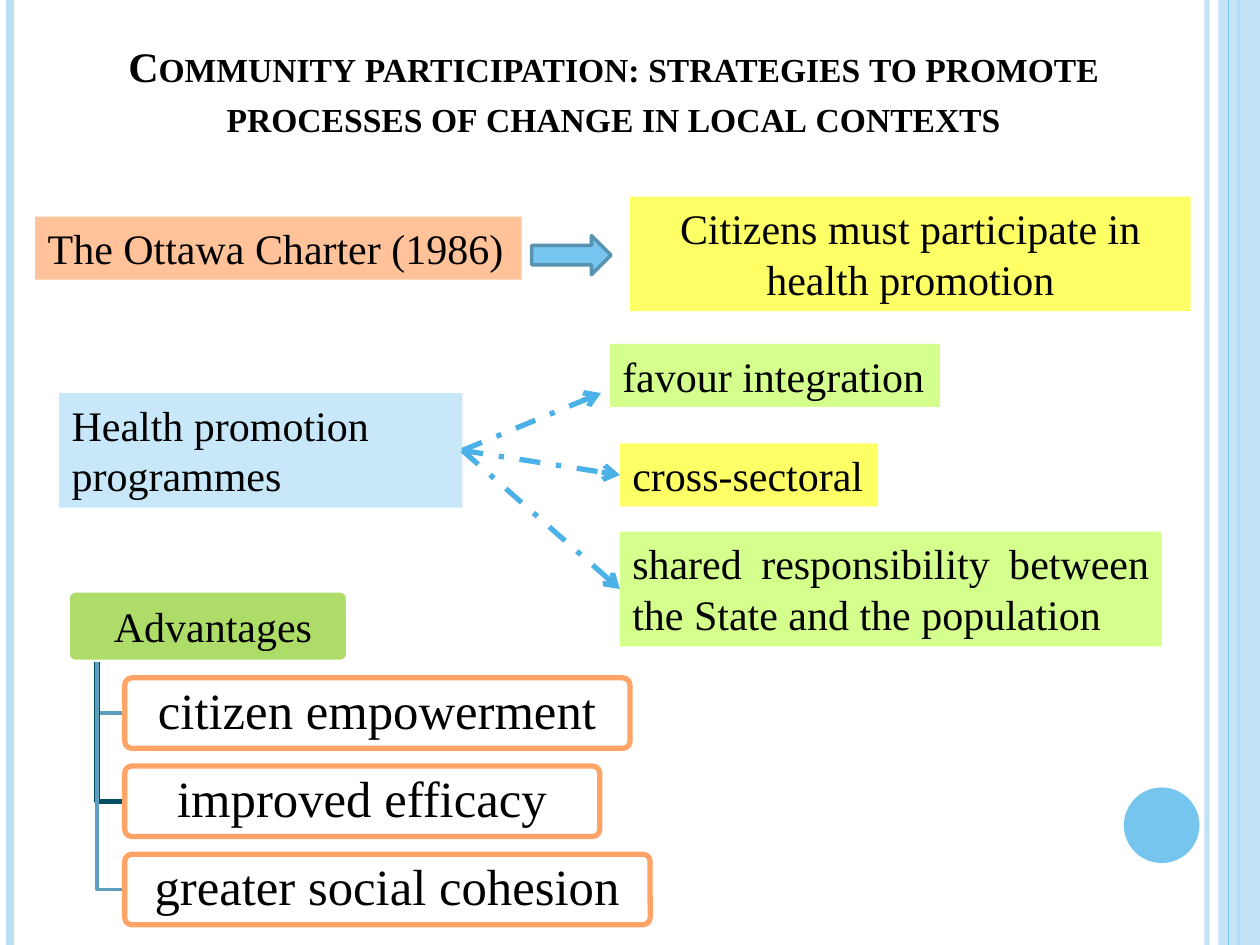
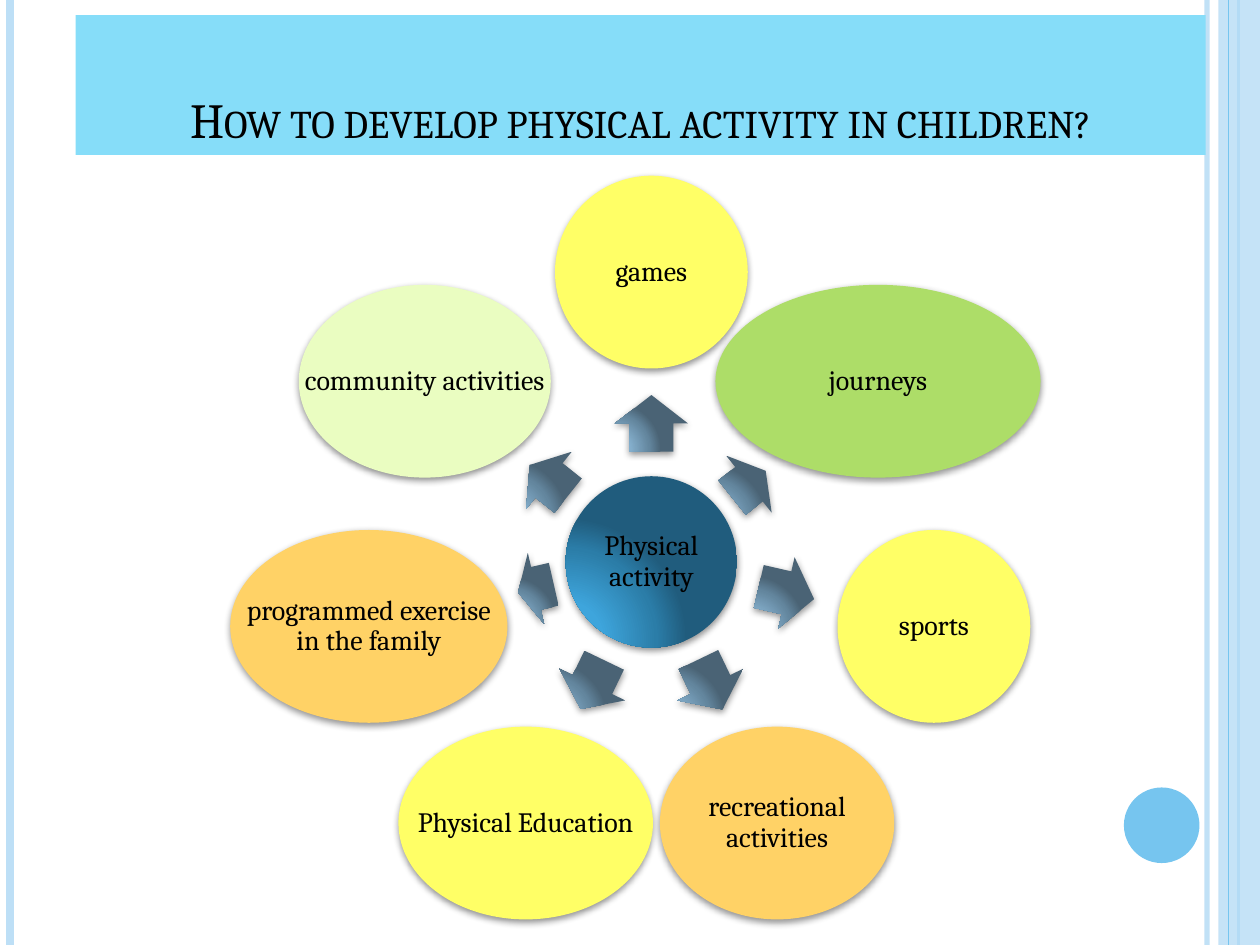
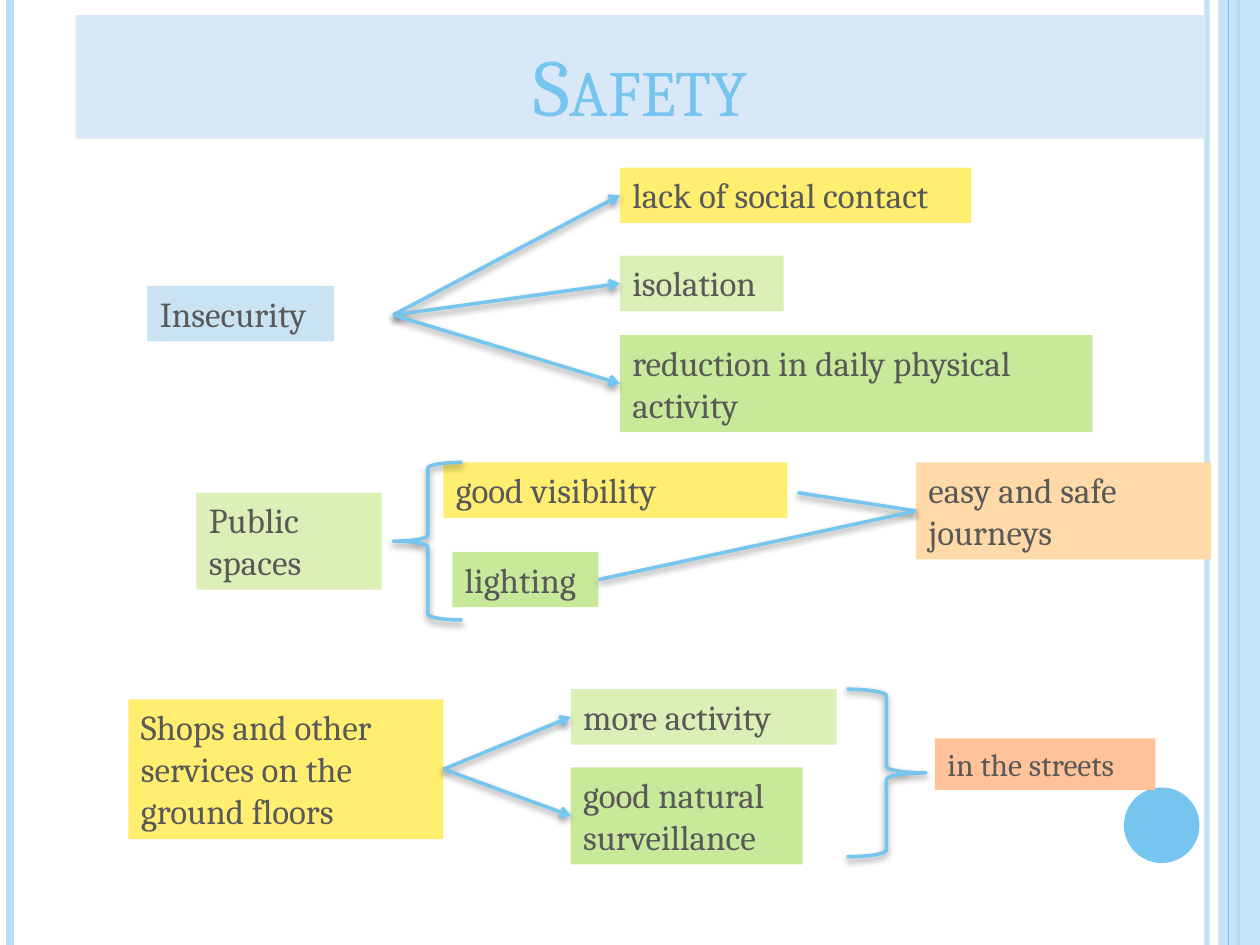
from math import cos, sin, radians
from lxml.etree import SubElement
from pptx import Presentation
from pptx.dml.color import RGBColor
from pptx.enum.dml import MSO_LINE
from pptx.enum.shapes import MSO_CONNECTOR, MSO_SHAPE as Kind
from pptx.enum.text import MSO_ANCHOR as Anchor, PP_ALIGN as Align
from pptx.oxml.ns import qn
from pptx.util import Inches, Pt

# Shared look
WIDE, HIGH = 10, 7.5
TIMES, CAMBRIA = "Times New Roman", "Cambria"
BLACK, WHITE, GREY = (RGBColor.from_string(c) for c in ("000000", "FFFFFF", "595959"))
SKY, PALE, BLUE = RGBColor(118, 197, 239), RGBColor(189, 223, 246), RGBColor(75, 177, 231)
STEEL, TEAL, EDGE = RGBColor(94, 158, 191), RGBColor(5, 78, 101), RGBColor(87, 146, 177)
ICE, MIST, AQUA = RGBColor(200, 232, 249), RGBColor(202, 227, 242), RGBColor(134, 221, 249)
HAZE = RGBColor(217, 232, 249)
YELLOW, LEMON, GOLD = RGBColor(255, 255, 102), RGBColor(255, 238, 112), RGBColor(255, 210, 102)
LIME, GREEN, CREAM = RGBColor(212, 255, 141), RGBColor(173, 221, 104), RGBColor(234, 253, 193)
LEAF, MINT = RGBColor(200, 232, 154), RGBColor(219, 239, 182)
PEACH, SAND, ORANGE = RGBColor(255, 194, 153), RGBColor(255, 217, 167), RGBColor(255, 164, 102)
HUB = ((0, "40ABE4"), (30, "3EA5DC"), (75, "2B7DA8"), (100, "205C7D"))
DART = ((0, "8CB9D8"), (30, "87B2D0"), (75, "63869E"), (100, "4A6375"))
GLOW, DROP = (42, 4, 1.6), (40, 4, 2)  # opacity, blur, distance

# Frame lines: x, colour, width, opacity
RULES = [(9.58, PALE, 3, 93), (0.08, PALE, 4.5, 100), (9.83, SKY, 1.5, 100)]

# Slide 1: text, place, fill, alignment
CHARTER = [
    ("The Ottawa Charter (1986)", (0.28, 1.72, 3.86, 0.5), PEACH, Align.LEFT),
    ("Citizens must participate in health promotion",
     (5, 1.56, 4.45, 0.91), YELLOW, Align.CENTER),
    ("Health promotion programmes", (0.47, 3.12, 3.2, 0.91), ICE, Align.LEFT),
    ("favour integration", (4.84, 2.73, 2.62, 0.5), LIME, Align.LEFT),
    ("cross-sectoral", (4.92, 3.52, 2.05, 0.5), YELLOW, Align.LEFT),
    ("shared responsibility between the State and the population",
     (4.92, 4.22, 4.3, 0.91), LIME, Align.JUSTIFY),
]
# Text, box width, branch colour, branch weight
GAINS = [("citizen empowerment", 4.01, STEEL, 2),
         ("improved efficacy", 3.77, TEAL, 3),
         ("greater social cohesion", 4.17, STEEL, 2)]

# Slide 2, clockwise from the top: text, width, fill, arrow length, arrow distance
RING = [
    ("games", 1.53, YELLOW, 0.45, 1.1),
    ("journeys", 2.58, GREEN, 0.34, 0.99),
    ("sports", 1.53, YELLOW, 0.45, 1.1),
    ("recreational activities", 1.86, GOLD, 0.44, 1.08),
    ("Physical Education", 2.02, YELLOW, 0.43, 1.08),
    ("programmed exercise in the family", 2.2, GOLD, 0.29, 0.94),
    ("community activities", 2, CREAM, 0.39, 1.04),
]

# Slide 3: key, text, place, fill
SAFETY = [
    ("fear", "Insecurity", (1.17, 2.27, 1.48, 0.44), MIST),
    ("lack", "lack of social contact", (4.92, 1.33, 2.79, 0.44), LEMON),
    ("less", "reduction in daily physical activity", (4.92, 2.66, 3.75, 0.77), LEAF),
    ("alone", "isolation", (4.92, 2.03, 1.3, 0.44), MINT),
    ("public", "Public\nspaces", (1.56, 3.91, 1.47, 0.77), MINT),
    ("view", "good visibility", (3.52, 3.67, 2.73, 0.44), LEMON),
    ("light", "lighting", (3.59, 4.38, 1.16, 0.44), LEAF),
    ("easy", "easy and safe journeys", (7.27, 3.67, 2.34, 0.77), SAND),
    ("shops", "Shops and other services on the ground floors",
     (1.02, 5.55, 2.5, 1.11), LEMON),
    ("more", "more activity", (4.53, 5.47, 2.11, 0.44), MINT),
    ("watch", "good natural\nsurveillance", (4.53, 6.09, 1.84, 0.77), LEAF),
]
FORK = (3.12, 2.5)
# From, to, arrowhead
LINKS = [(FORK, "lack", True), (FORK, "alone", True), (FORK, "less", True),
         ((6.33, 3.91), "easy", False), ("light", "easy", False),
         ("shops", "more", True), ("shops", "watch", True)]
BRACES = [(Kind.LEFT_BRACE, (3.12, 3.67, 0.55, 1.25)),
          (Kind.RIGHT_BRACE, (6.72, 5.47, 0.63, 1.33))]


# Drawing tools
def effect(shape, shadow):
    """Replace the theme shadow by none, or by the given soft one."""
    props = shape._element.spPr
    effects = props.find(qn("a:effectLst"))
    if effects is None:
        effects = SubElement(props, qn("a:effectLst"))
    if shadow:
        alpha, blur, dist = shadow
        outer = SubElement(effects, qn("a:outerShdw"), blurRad=str(Pt(blur)),
                           dist=str(Pt(dist)), dir="5400000", rotWithShape="0")
        color = SubElement(outer, qn("a:srgbClr"), val="000000")
        SubElement(color, qn("a:alpha"), val=str(alpha * 1000))


def fade(shape, percent):
    color = shape._element.spPr.find(".//" + qn("a:srgbClr"))
    SubElement(color, qn("a:alpha"), val=str(percent * 1000))


def glow(shape, stops):
    """Fill with a round gradient lit from the lower left."""
    shape.fill.gradient()
    grad = shape._element.spPr.find(qn("a:gradFill"))
    for child in list(grad):
        grad.remove(child)
    items = SubElement(grad, qn("a:gsLst"))
    for place, color in stops:
        stop = SubElement(items, qn("a:gs"), pos=str(place * 1000))
        SubElement(stop, qn("a:srgbClr"), val=color)
    round_ = SubElement(grad, qn("a:path"), {"path": "circle"})
    SubElement(round_, qn("a:fillToRect"), l="5000", t="100000", r="120000", b="10000")


def style(shape, fill=None, line=None, weight=2, shadow=None):
    if isinstance(fill, tuple) and not isinstance(fill, RGBColor):
        glow(shape, fill)
    elif fill is None:
        shape.fill.background()
    else:
        shape.fill.solid()
        shape.fill.fore_color.rgb = fill
    if line is None:
        shape.line.fill.background()
    else:
        shape.line.color.rgb = line
        shape.line.width = Pt(weight)
    shape.shadow.inherit = False
    effect(shape, shadow)
    return shape


def draw(slide, kind, place, adjust=(), **look):
    shape = slide.shapes.add_shape(kind, *map(Inches, place))
    for i, value in enumerate(adjust):
        shape.adjustments[i] = value
    return style(shape, **look)


def trace(slide, points, **look):
    """Draw an open outline through points in inches."""
    first, *rest = [tuple(map(Inches, p)) for p in points]
    pen = slide.shapes.build_freeform(*first)
    pen.add_line_segments(rest, close=False)
    return style(pen.convert_to_shape(), **look)


def write(shape, text, size=24, font=TIMES, color=BLACK, bold=False, caps=False,
          align=Align.LEFT, anchor=Anchor.TOP, inset=(0.1, 0.05, 0.1, 0.05), space=None):
    frame = shape.text_frame
    frame.word_wrap, frame.vertical_anchor = True, anchor
    (frame.margin_left, frame.margin_top,
     frame.margin_right, frame.margin_bottom) = map(Inches, inset)
    for i, part in enumerate(text.split("\n")):
        para = frame.add_paragraph() if i else frame.paragraphs[0]
        para.alignment, para.line_spacing = align, space
        run = para.add_run()
        run.text = part
        run.font.size, run.font.name, run.font.bold = Pt(size), font, bold
        run.font.color.rgb = color
        if caps:
            run.font._element.set("cap", "small")
    return shape


def link(slide, start, end, color=SKY, weight=2, head=False, dash=None, shadow=None):
    """Join points, or the right side of one box to the left side of another."""
    spot = [p if isinstance(p, tuple) else (0, 0) for p in (start, end)]
    line = slide.shapes.add_connector(
        MSO_CONNECTOR.STRAIGHT, *(Inches(v) for p in spot for v in p))
    if not isinstance(start, tuple):
        line.begin_connect(start, 3)
    if not isinstance(end, tuple):
        line.end_connect(end, 1)
    line.line.color.rgb, line.line.width = color, Pt(weight)
    if dash:
        line.line.dash_style = dash
    if head:
        SubElement(line.line._get_or_add_ln(), qn("a:tailEnd"), type="arrow")
    effect(line, shadow)
    return line


def start(deck, text, place, fill=None, **form):
    """Add a slide with the shared frame and title."""
    slide = deck.slides.add_slide(deck.slide_layouts[6])
    for x, color, weight, alpha in RULES:
        rule = link(slide, (x, 0), (x, HIGH), color, weight)
        if alpha < 100:
            fade(rule, alpha)
    fade(draw(slide, Kind.RECTANGLE, (9.67, 0, 0.33, HIGH), fill=PALE), 87)
    link(slide, (9.75, 0), (9.75, HIGH), SKY, 0.75)
    draw(slide, Kind.OVAL, (8.92, 6.25, 0.6, 0.6), fill=SKY)
    write(draw(slide, Kind.RECTANGLE, place, fill=fill), text, caps=True,
          align=Align.CENTER, anchor=Anchor.BOTTOM, **form)
    return slide


# Slides
def charter(deck):
    slide = start(deck, "Community participation: strategies to promote processes of "
                  "change in local contexts", (0.47, 0.23, 8.8, 0.94), bold=True)
    boxes = [write(draw(slide, Kind.RECTANGLE, place, fill=fill), text, align=align)
             for text, place, fill, align in CHARTER]
    draw(slide, Kind.RIGHT_ARROW, (4.22, 1.87, 0.63, 0.31), fill=SKY, line=EDGE)
    for end in ((4.77, 3.12), boxes[4], boxes[5]):
        link(slide, boxes[2], end, BLUE, 3, True, MSO_LINE.DASH_DOT)

    # Tree of advantages
    tall, step, trunk, left, top = 0.56, 0.7, 0.77, 0.99, 5.25
    mid = dict(align=Align.CENTER, anchor=Anchor.MIDDLE)
    root = draw(slide, Kind.ROUNDED_RECTANGLE, (0.54, top - tall, 2.22, tall), (0.1,),
                fill=GREEN, line=WHITE)
    write(root, "Advantages", inset=(0.13, 0.03, 0.05, 0.03), **mid)
    for i, (text, wide, color, weight) in enumerate(GAINS):
        y = 5.38 + i * step
        turn = y + tall / 2
        trace(slide, [(trunk, top), (trunk, turn), (left, turn)], line=color, weight=weight)
        leaf = draw(slide, Kind.ROUNDED_RECTANGLE, (left, y, wide, tall), (0.1,),
                    fill=WHITE, line=ORANGE, weight=3)
        fade(leaf, 90)
        write(leaf, text, size=29, space=0.9, inset=(0.06, 0.04, 0.06, 0.04), **mid)


def ring(deck):
    slide = start(deck, "How to develop physical activity in children?",
                  (0.6, 0.12, 8.97, 1.11), AQUA, size=28, font=CAMBRIA)
    cx, cy, reach, tall, dart = 5.17, 4.46, 2.3, 1.53, 0.58

    def bubble(x, y, wide, high, text, fill):
        place = (x - wide / 2, y - high / 2, wide, high)
        draw(slide, Kind.OVAL, place, fill=fill, shadow=GLOW)
        label = slide.shapes.add_textbox(*map(Inches, place))
        write(label, text, size=16, font=CAMBRIA, space=0.9, inset=(0.02,) * 4,
              align=Align.CENTER, anchor=Anchor.MIDDLE)

    bubble(cx, cy, 1.36, 1.36, "Physical activity", HUB)
    for i, (text, wide, fill, long, away) in enumerate(RING):
        turn = i * 360 / len(RING) - 90
        dx, dy = cos(radians(turn)), sin(radians(turn))
        arrow = draw(slide, Kind.RIGHT_ARROW,
                     (cx + away * dx - long / 2, cy + away * dy - dart / 2, long, dart),
                     (0.6, 0.5), fill=DART, shadow=GLOW)
        arrow.rotation = turn % 360
        bubble(cx + reach * dx, cy + reach * dy, wide, tall, text, fill)


def safety(deck):
    slide = start(deck, "Safety", (0.6, 0.12, 8.97, 0.98), HAZE,
                  size=46, font=CAMBRIA, color=SKY)
    form = dict(font=CAMBRIA, color=GREY)
    boxes = {key: write(draw(slide, Kind.RECTANGLE, place, fill=fill), text, size=20, **form)
             for key, text, place, fill in SAFETY}
    for a, b, head in LINKS:
        link(slide, boxes.get(a, a), boxes[b], head=head, shadow=DROP)
    for kind, place in BRACES:
        draw(slide, kind, place, line=SKY, shadow=DROP)
    street = draw(slide, Kind.RECTANGLE, (7.42, 5.86, 1.75, 0.41), fill=PEACH)
    write(street, "in the streets", size=18, **form)


def main():
    deck = Presentation()
    deck.slide_width, deck.slide_height = Inches(WIDE), Inches(HIGH)
    for make in (charter, ring, safety):
        make(deck)
    deck.save("out.pptx")


if __name__ == "__main__":
    main()
